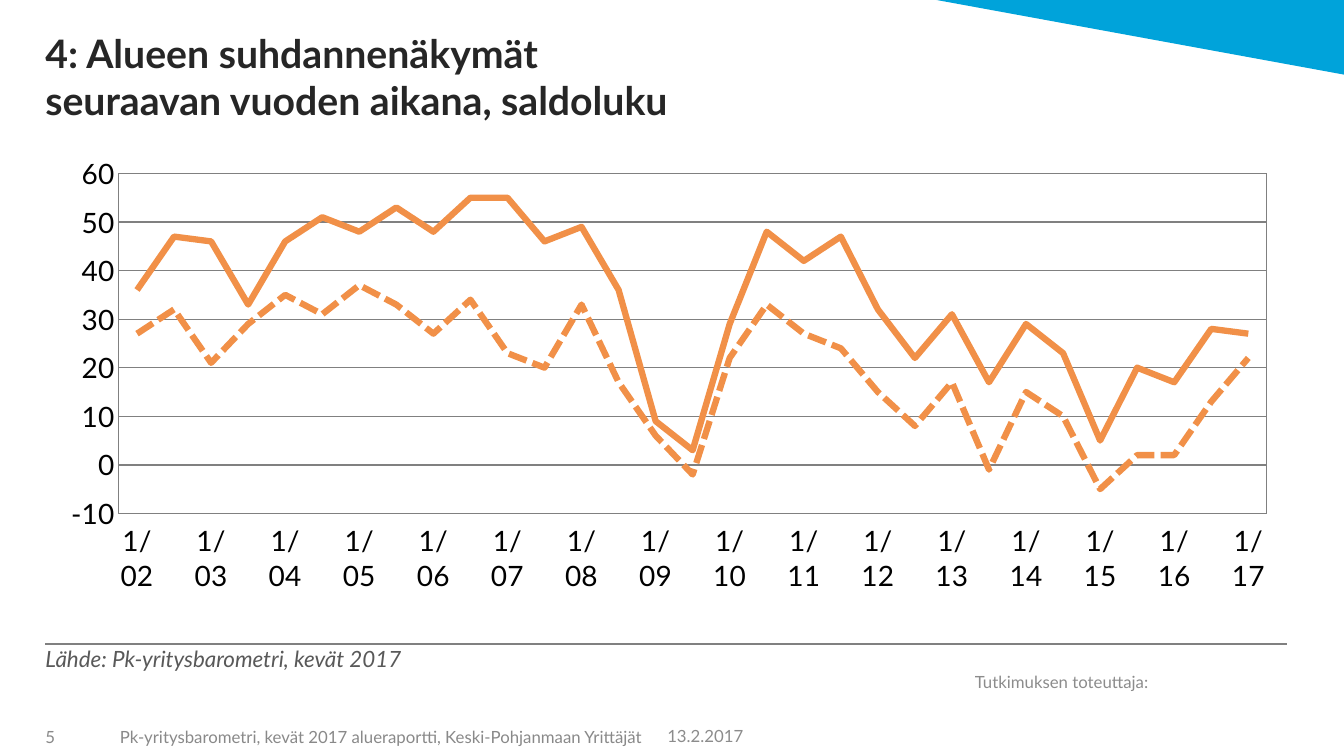
"""Build the slide on regional business outlook balances."""
from lxml import etree
from pptx import Presentation
from pptx.chart.data import CategoryChartData
from pptx.dml.color import RGBColor
from pptx.enum import chart as ch, dml, shapes, text
from pptx.oxml import parse_xml
from pptx.oxml.ns import nsdecls, qn
from pptx.util import Inches, Pt

FONT = "Lato"
TITLE = "4: Alueen suhdannenäkymät \vseuraavan vuoden aikana, saldoluku"
SOURCE = "Lähde: Pk-yritysbarometri, kevät 2017"
LABELS = [
    ("Tutkimuksen toteuttaja:", "8C8C8C", (9.57, 6.56, 2.18, 0.41), 0.1),
    ("Pk-yritysbarometri, kevät 2017 alueraportti, Keski-Pohjanmaan Yrittäjät",
     "898989", (1.09, 7.13, 5.41, 0.35), 0.1),
    ("5", "898989", (0.45, 7.13, 0.63, 0.35), 0),
    ("13.2.2017", "8C8C8C", (6.52, 7.12, 1.33, 0.35), 0.1),
]
YEARS = range(2, 18)
SERIES = [
    (dml.MSO_LINE.SOLID,
     [36, 47, 46, 33, 46, 51, 48, 53, 48, 55, 55, 46, 49, 36, 9, 3, 29, 48,
      42, 47, 32, 22, 31, 17, 29, 23, 5, 20, 17, 28, 27]),
    (dml.MSO_LINE.SQUARE_DOT,
     [27, 32, 21, 29, 35, 31, 37, 33, 27, 34, 23, 20, 33, 17, 6, -2, 22, 33,
      27, 24, 15, 8, 17, -1, 15, 10, -5, 2, 2, 13, 22]),
]
PLOT = {"x": 0.059, "y": 0.033, "w": 0.926, "h": 0.717}


def rgb(value):
    return RGBColor.from_string(value)


def style_font(font, size, color, bold=False, italic=False):
    font.name, font.size = FONT, Pt(size)
    font.bold, font.italic = bold, italic
    font.color.rgb = rgb(color)


def style_line(line, color, width):
    line.color.rgb = rgb(color)
    line.width = Pt(width)


def fill_placeholder(sp, box, words, anchor, size, color, **look):
    sp.left, sp.top, sp.width, sp.height = map(Inches, box)
    tf = sp.text_frame
    tf.text = words
    tf.auto_size = text.MSO_AUTO_SIZE.NONE
    tf.vertical_anchor = anchor
    tf.margin_left = tf.margin_top = tf.margin_right = tf.margin_bottom = 0
    p = tf.paragraphs[0]
    p.alignment = text.PP_ALIGN.LEFT
    p.space_before = Pt(0)
    for r in p.runs:
        style_font(r.font, size, color, **look)
    return p


def add_label(s, words, color, box, left_margin):
    tf = s.shapes.add_textbox(*map(Inches, box)).text_frame
    tf.word_wrap = True
    tf.vertical_anchor = text.MSO_ANCHOR.MIDDLE
    tf.margin_left = Inches(left_margin)
    tf.text = words
    style_font(tf.paragraphs[0].runs[0].font, 12, color)


def add_outlook_chart(s):
    data = CategoryChartData(number_format="0")
    data.categories = [c for y in YEARS for c in (f"1/{y:02d}", "")][:-1]
    for _, values in SERIES:
        data.add_series("", values)
    chart = s.shapes.add_chart(
        ch.XL_CHART_TYPE.LINE, Inches(0.45), Inches(1.55),
        Inches(12.3), Inches(4.72), data).chart
    chart.has_legend = chart.has_title = False
    style_font(chart.font, 20, "000000")
    chart.plots[0].vary_by_categories = False
    for series, (dash, _) in zip(chart.plots[0].series, SERIES):
        series.smooth = False
        series.marker.style = ch.XL_MARKER_STYLE.NONE
        style_line(series.format.line, "F19048", 4.5)
        series.format.line.dash_style = dash

    cat, val = chart.category_axis, chart.value_axis
    for axis, width in ((cat, 1.5), (val, 0.75)):
        axis.major_tick_mark = axis.minor_tick_mark = ch.XL_TICK_MARK.NONE
        style_line(axis.format.line, "808080", width)
    cat.tick_label_position = ch.XL_TICK_LABEL_POSITION.LOW
    val.minimum_scale, val.maximum_scale, val.major_unit = -10, 60, 10
    val.tick_labels.number_format = "0"
    val.tick_labels.number_format_is_linked = False
    val.has_major_gridlines = True
    style_line(val.major_gridlines.format.line, "808080", 0.75)

    area = chart.plots[0]._element.getparent()
    for old in area.findall(qn("c:layout")):
        area.remove(old)
    sizes = "".join(f'<c:{k} val="{v}"/>' for k, v in PLOT.items())
    area.insert(0, parse_xml(
        f'<c:layout {nsdecls("c")}><c:manualLayout>'
        '<c:layoutTarget val="inner"/><c:xMode val="edge"/>'
        f'<c:yMode val="edge"/>{sizes}</c:manualLayout></c:layout>'))
    area.append(parse_xml(
        f'<c:spPr {nsdecls("c", "a")}><a:noFill/><a:ln w="9525"><a:solidFill>'
        '<a:srgbClr val="808080"/></a:solidFill></a:ln></c:spPr>'))


def main():
    prs = Presentation()
    prs.slide_width, prs.slide_height = Inches(13.33), Inches(7.5)
    s = prs.slides.add_slide(prs.slide_layouts[1])

    corner = s.shapes.add_shape(
        shapes.MSO_SHAPE.RIGHT_TRIANGLE,
        *map(Inches, (9.29, 0, 4.04, 0.74)))
    corner.rotation = 180
    corner.shadow.inherit = False
    corner.fill.solid()
    corner.fill.fore_color.rgb = rgb("00A3DA")
    corner.line.fill.background()

    rule = s.shapes.add_connector(
        shapes.MSO_CONNECTOR.STRAIGHT,
        *map(Inches, (0.45, 6.39, 12.76, 6.39)))
    style_line(rule.line, "808080", 1.5)
    etree.SubElement(rule._element.spPr, qn("a:effectLst"))

    fill_placeholder(s.shapes.title, (0.45, 0, 12.3, 1.22), TITLE,
                     text.MSO_ANCHOR.BOTTOM, 28, "262626", bold=True)
    add_outlook_chart(s)
    p = fill_placeholder(s.placeholders[1], (0.45, 6.4, 10.62, 0.43), SOURCE,
                         text.MSO_ANCHOR.TOP, 16, "595959", italic=True)
    pPr = p._p.get_or_add_pPr()
    pPr.set("marL", "0")
    pPr.set("indent", "0")
    etree.SubElement(pPr, qn("a:buNone"))
    for label in LABELS:
        add_label(s, *label)
    prs.save("out.pptx")


if __name__ == "__main__":
    main()
